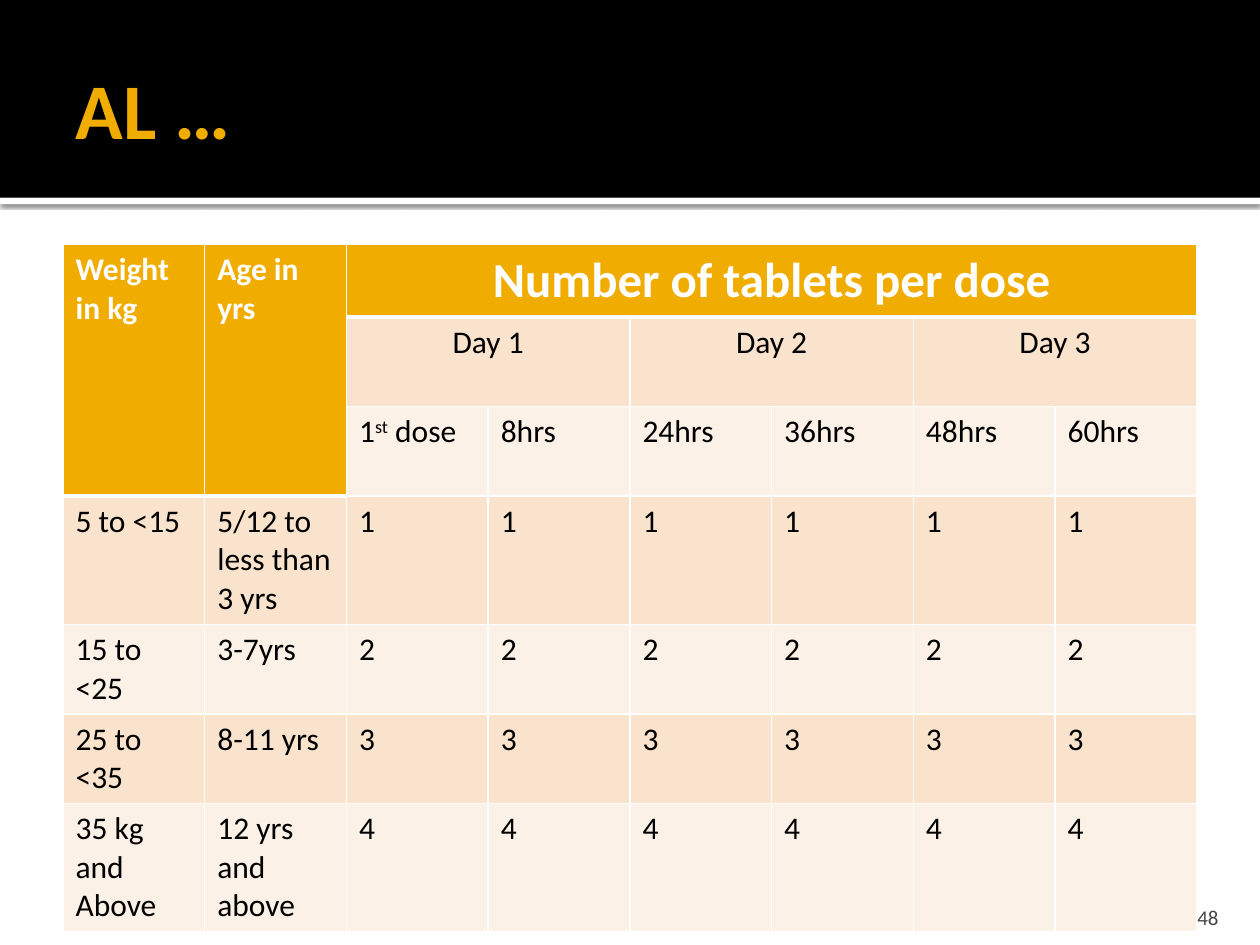
from lxml.etree import SubElement
from pptx import Presentation
from pptx.dml.color import RGBColor
from pptx.enum.shapes import MSO_SHAPE as Preset
from pptx.enum.text import MSO_ANCHOR as Anchor, PP_ALIGN as Align
from pptx.oxml.ns import qn
from pptx.util import Inches, Pt

GOLD, PEACH, CREAM = "F0AD00", "F9E3CC", "FCF1E7"
WHITE, BLACK, GREY = "FFFFFF", "000000", "454545"


def rgb(color):
    return RGBColor.from_string(color)


def style(frame, size, color, bold=False, align=Align.LEFT):
    """Format every paragraph and run of a text frame."""
    for paragraph in frame.paragraphs:
        paragraph.alignment = align
        for run in paragraph.runs:
            font = run.font
            font.name, font.size, font.bold = "Calibri", Pt(size), bold
            font.color.rgb = rgb(color)


deck = Presentation()
deck.slide_width, deck.slide_height = Inches(10), Inches(7.5)
slide = deck.slides.add_slide(deck.slide_layouts[5])
shapes = slide.shapes

# Black heading band above a white rule that casts a soft shadow
for top, height, color in [(1.57, 0.05, WHITE), (0, 1.57, BLACK)]:
    band = shapes.add_shape(Preset.RECTANGLE, 0, Inches(top), deck.slide_width, Inches(height))
    band.shadow.inherit = False
    band.fill.solid()
    band.fill.fore_color.rgb = rgb(color)
    band.line.fill.background()
    if color == WHITE:
        effects = band.element.spPr.find(qn("a:effectLst"))
        shadow = SubElement(effects, qn("a:outerShdw"), blurRad=str(Pt(2.5)),
                            dist=str(Pt(0.8)), dir="5400000", algn="tl", rotWithShape="0")
        shade = SubElement(shadow, qn("a:srgbClr"), val=BLACK)
        SubElement(shade, qn("a:alpha"), val="60000")

heading = shapes.title
shapes.element.append(heading.element)  # bring in front of the band
heading.left, heading.top = Inches(0.5), Inches(0.17)
heading.width, heading.height = Inches(9), Inches(1.37)
heading_frame = heading.text_frame
heading_frame.text = "AL …"
heading_frame.vertical_anchor = Anchor.MIDDLE
heading_frame.margin_left = Inches(0.1)
heading_frame.margin_right = heading_frame.margin_top = heading_frame.margin_bottom = Inches(0.05)
style(heading_frame, 45, GOLD, bold=True)

# Dosing table: three heading rows, then one row per weight band
groups = [("5 to <15", "5/12 to less than 3 yrs"), ("15 to <25", "3-7yrs"),
          ("25 to <35", "8-11 yrs"), ("35 kg and Above", "12 yrs and above")]
rows = [
    ["Weight in kg", "Age in yrs", "Number of tablets per dose"] + [""] * 5,
    ["", "", "Day 1", "", "Day 2", "", "Day 3", ""],
    ["", "", "", "8hrs", "24hrs", "36hrs", "48hrs", "60hrs"],
] + [[weight, age] + [str(tablets)] * 6 for tablets, (weight, age) in enumerate(groups, 1)]
row_heights = [0.57, 0.71, 0.71, 1.02, 0.71, 0.71, 1.01]

dosing = shapes.add_table(len(rows), 8, Inches(0.5), Inches(1.94),
                          Inches(9), Inches(sum(row_heights))).table
for column in dosing.columns:
    column.width = Inches(9 / 8)
for row, height in zip(dosing.rows, row_heights):
    row.height = Inches(height)

for r, row in enumerate(rows):
    for c, wording in enumerate(row):
        cell = dosing.cell(r, c)
        is_header = r == 0 or (c < 2 and r < 3)
        last_header_row = 2 if c < 2 else 0
        cell_xml = cell._tc.get_or_add_tcPr()
        for side in "LRTB":
            thick = (side == "B" and (r == last_header_row or (r == 0 and c < 2))
                     or side == "T" and r == last_header_row + 1)
            border = SubElement(cell_xml, qn(f"a:ln{side}"), w=str(Pt(3 if thick else 1)))
            stroke = SubElement(border, qn("a:solidFill"))
            SubElement(stroke, qn("a:srgbClr"), val=WHITE)
        cell.fill.solid()
        cell.fill.fore_color.rgb = rgb(GOLD if is_header else PEACH if r % 2 else CREAM)
        if (r, c) == (2, 2):
            for part in ("1", "st", " dose"):
                run = cell.text_frame.paragraphs[0].add_run()
                run.text = part
                if part == "st":
                    run._r.get_or_add_rPr().set("baseline", "30000")
        elif wording:
            cell.text_frame.text = wording
        centred = c >= 2 and r < 2
        style(cell.text_frame, 28 if r == 0 and centred else 18, WHITE if is_header else BLACK,
              is_header, Align.CENTER if centred else Align.LEFT)

for first, last in [((0, 0), (2, 0)), ((0, 1), (2, 1)), ((0, 2), (0, 7)),
                    ((1, 2), (1, 3)), ((1, 4), (1, 5)), ((1, 6), (1, 7))]:
    dosing.cell(*first).merge(dosing.cell(*last))

page_number = shapes.add_textbox(Inches(8.97), Inches(7.08), Inches(0.8), Inches(0.3))
page_frame = page_number.text_frame
page_frame.word_wrap = True
page_frame.text = "48"
page_frame.vertical_anchor = Anchor.BOTTOM
page_frame.margin_bottom = 0
style(page_frame, 12, GREY, align=Align.RIGHT)

deck.save("out.pptx")
